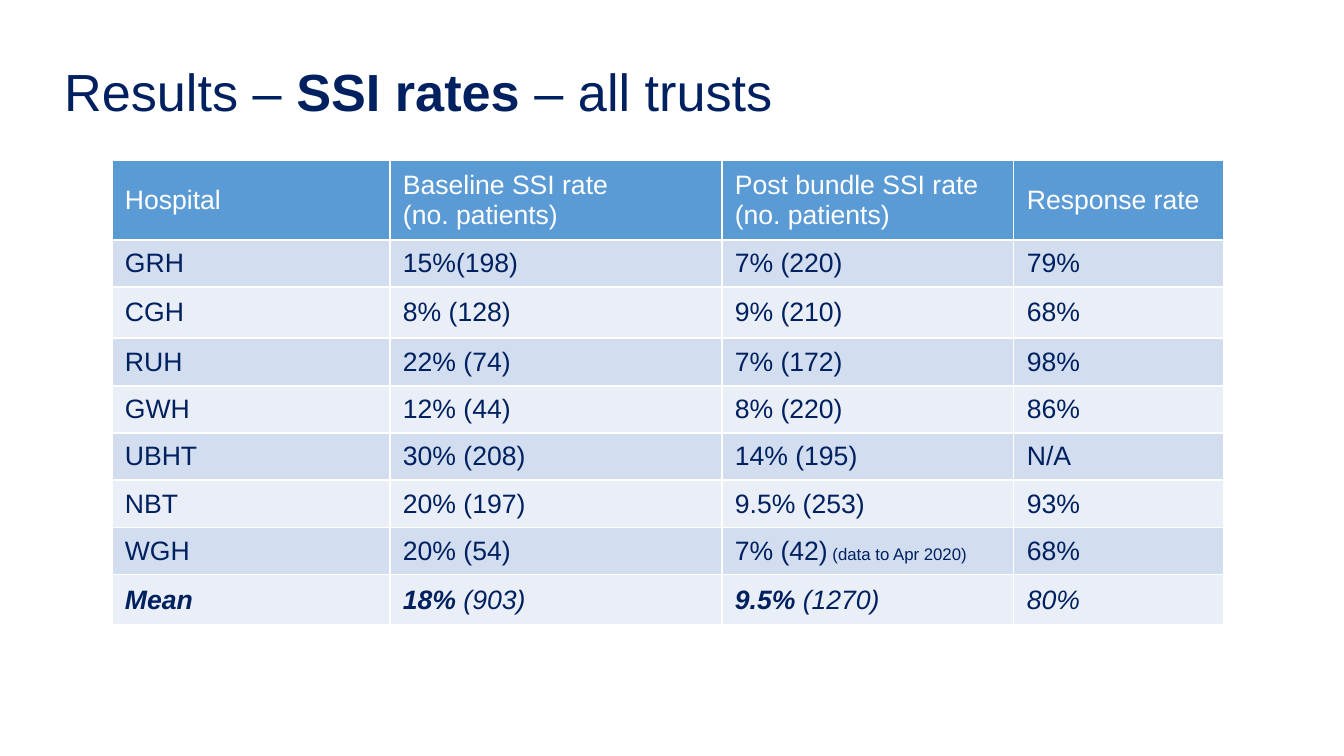
"""Build the slide with SSI rates for all trusts."""
import pptx
import pptx.util
import pptx.dml.color
import pptx.enum.text
import pptx.oxml
import pptx.oxml.ns

TITLE = [("Results – ", {}), ("SSI rates", {"bold": True}), (" – all trusts", {})]
STRONG = {"bold": True, "italic": True}
SLANT = {"italic": True}
ROWS = [
    ["Hospital", "Baseline SSI rate\n(no. patients)",
     "Post bundle SSI rate (no. patients)", "Response rate"],
    ["GRH", "15%(198)", "7% (220)", "79%"],
    ["CGH", "8% (128)", "9% (210)", "68%"],
    ["RUH", "22% (74)", "7% (172)", "98%"],
    ["GWH", "12% (44)", "8% (220)", "86%"],
    ["UBHT", "30% (208)", "14% (195)", "N/A"],
    ["NBT", "20% (197)", "9.5% (253)", "93%"],
    ["WGH", "20% (54)",
     [("7% (42)", {}), (" (data to Apr 2020)", {"size": 12})], "68%"],
    [[("Mean", STRONG)], [("18% ", STRONG), ("(903)", SLANT)],
     [("9.5% ", STRONG), ("(1270)", SLANT)], [("80%", SLANT)]],
]
WIDTHS = [278, 332, 292, 210]
HEIGHTS = [80, 47, 51, 48, 47, 47, 48, 47, 50]
COLORS = {"navy": "002060", "white": "FFFFFF", "head": "5B9BD5",
          "odd": "D2DEEF", "even": "EAEFF7"}
SCALE = 914400 / 100.8


def px(num):
    return pptx.util.Emu(round(num * SCALE))


def rgb(name):
    return pptx.dml.color.RGBColor.from_string(COLORS[name])


def write(par, text, size=19, color="navy", bold=False, italic=False):
    run = par.add_run()
    run.text = text
    font = run.font
    font.name = "Arial"
    font.size = pptx.util.Pt(size)
    font.color.rgb = rgb(color)
    font.bold = bold
    font.italic = italic


def edge(cell):
    props = cell._tc.get_or_add_tcPr()
    space = pptx.oxml.ns.nsdecls("a")
    for side in "LRTB":
        props.append(pptx.oxml.parse_xml(
            f'<a:ln{side} {space} w="12700"><a:solidFill>'
            f'<a:srgbClr val="{COLORS["white"]}"/></a:solidFill></a:ln{side}>'))


def fill_cell(cell, value, tone, color):
    edge(cell)
    cell.fill.solid()
    cell.fill.fore_color.rgb = rgb(tone)
    cell.vertical_anchor = pptx.enum.text.MSO_ANCHOR.MIDDLE
    cell.margin_left = cell.margin_right = px(13)
    cell.margin_top = cell.margin_bottom = px(7)
    frame = cell.text_frame
    if isinstance(value, str):
        lines = [[(line, {})] for line in value.split("\n")]
    else:
        lines = [value]
    for num, line in enumerate(lines):
        par = frame.add_paragraph() if num else frame.paragraphs[0]
        for text, form in line:
            write(par, text, color=color, **form)


def add_title(slide):
    title = slide.shapes.title
    title.left, title.top, title.width, title.height = map(px, (54, 61, 1063, 85))
    frame = title.text_frame
    frame.word_wrap = True
    frame.auto_size = pptx.enum.text.MSO_AUTO_SIZE.NONE
    frame.vertical_anchor = pptx.enum.text.MSO_ANCHOR.TOP
    par = frame.paragraphs[0]
    par.alignment = pptx.enum.text.PP_ALIGN.LEFT
    par.line_spacing = 0.9
    for text, form in TITLE:
        write(par, text, size=37.3, **form)


def add_rates(slide):
    table = slide.shapes.add_table(
        len(ROWS), len(WIDTHS), px(112), px(160),
        px(sum(WIDTHS)), px(sum(HEIGHTS))).table
    for col, width in zip(table.columns, WIDTHS):
        col.width = px(width)
    for num, values in enumerate(ROWS):
        table.rows[num].height = px(HEIGHTS[num])
        tone = ("odd" if num % 2 else "even") if num else "head"
        color = "navy" if num else "white"
        for pos, value in enumerate(values):
            fill_cell(table.cell(num, pos), value, tone, color)


def main():
    deck = pptx.Presentation()
    deck.slide_width, deck.slide_height = px(1344), px(756)
    slide = deck.slides.add_slide(deck.slide_layouts[5])
    add_title(slide)
    add_rates(slide)
    deck.save("out.pptx")


if __name__ == "__main__":
    main()
